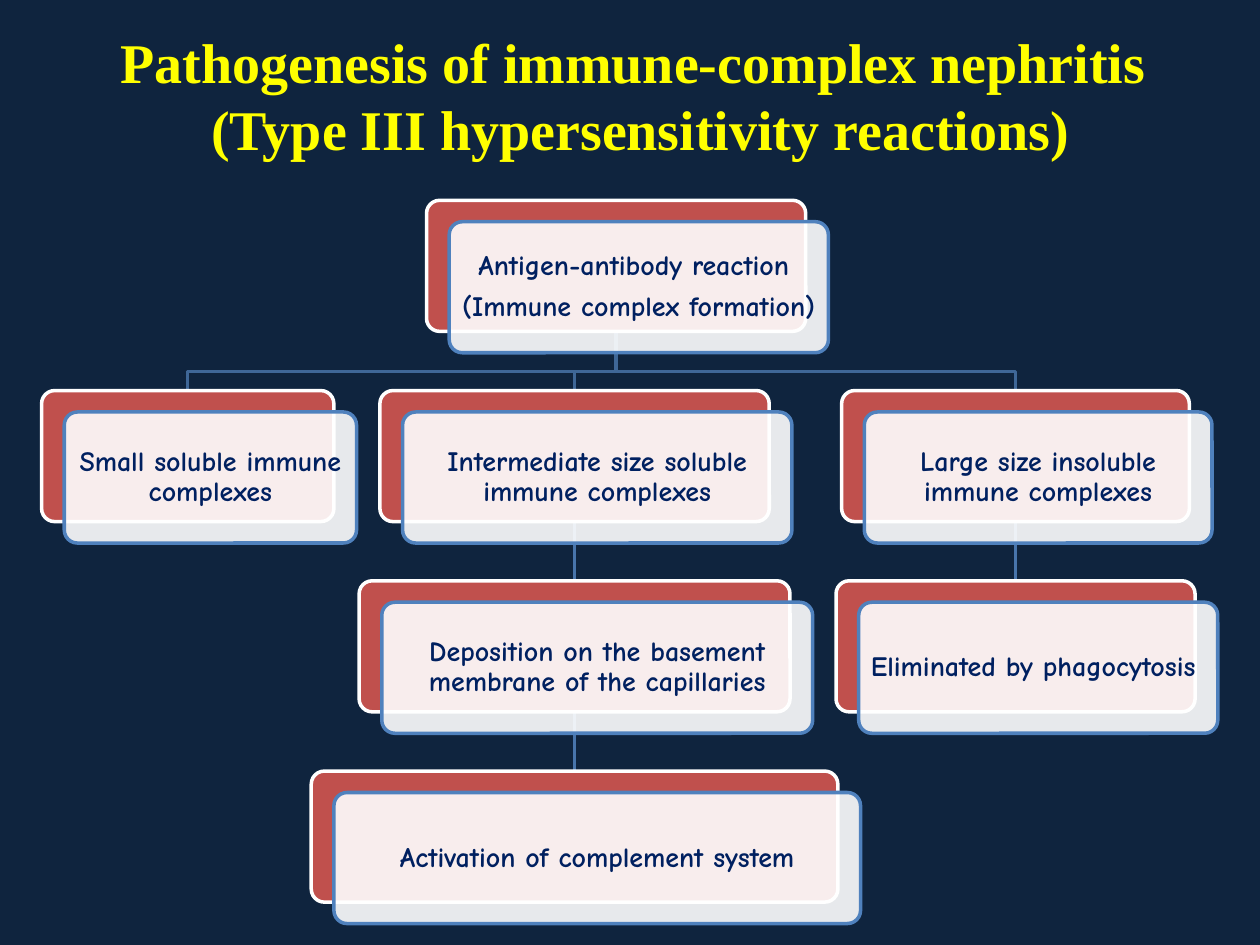
import pptx
import pptx.util
import pptx.dml.color
import pptx.enum.shapes
import pptx.enum.text
import pptx.oxml
import pptx.oxml.ns
from pptx.util import Inches

RGBColor = pptx.dml.color.RGBColor
NAVY = RGBColor(0x0F, 0x24, 0x3E)
RED = RGBColor(0xC0, 0x50, 0x4D)
WHITE = RGBColor(0xFF, 0xFF, 0xFF)
BLUE = RGBColor(0x4F, 0x81, 0xBD)
INK = RGBColor(0x00, 0x20, 0x60)
YELLOW = RGBColor(0xFF, 0xFF, 0x00)
FORK = RGBColor(0x3F, 0x67, 0x97)
STEM = RGBColor(0x48, 0x75, 0xAC)

# Card grid
TOP, STEP, HIGH = 1.59, 1.51, 1.04
SHIFT_X, SHIFT_Y = 0.18, 0.17
FORK_Y = 2.95


class Chart:
    """Holds the style and the current slide."""

    def __init__(self, slide):
        self.slide = slide
        self.shapes = slide.shapes
        slide.background.fill.solid()
        slide.background.fill.fore_color.rgb = NAVY

    def edge(self, line, color):
        line.color.rgb = color
        line.width = pptx.util.Pt(2)

    def label(self, frame, lines, font, size, color):
        frame.text = "\n".join(lines)
        frame.word_wrap = True
        for para in frame.paragraphs:
            para.alignment = pptx.enum.text.PP_ALIGN.CENTER
            for run in para.runs:
                run.font.name = font
                run.font.size = pptx.util.Pt(size)
                run.font.bold = True
                run.font.color.rgb = color

    def title(self, lines):
        box = self.shapes.add_textbox(Inches(0.42), Inches(0.17), Inches(9.33), Inches(1.18))
        self.label(box.text_frame, lines, "Times New Roman", 32, YELLOW)

    def plate(self, left, top, width, fill, line):
        kind = pptx.enum.shapes.MSO_SHAPE.ROUNDED_RECTANGLE
        shape = self.shapes.add_shape(kind, Inches(left), Inches(top), Inches(width), Inches(HIGH))
        shape.adjustments[0] = 0.1
        shape.shadow.inherit = False
        shape.fill.solid()
        shape.fill.fore_color.rgb = fill
        self.edge(shape.line, line)
        return shape

    def card(self, mid, row, width, lines):
        left, top = mid - width / 2, TOP + row * STEP
        self.plate(left, top, width, RED, WHITE)
        front = self.plate(left + SHIFT_X, top + SHIFT_Y, width, WHITE, BLUE)
        # Let the red plate show faintly through the front one
        tint = front._element.spPr.find(".//" + pptx.oxml.ns.qn("a:srgbClr"))
        tint.append(pptx.oxml.parse_xml(
            "<a:alpha %s val='90000'/>" % pptx.oxml.ns.nsdecls("a")))
        frame = front.text_frame
        frame.margin_left = frame.margin_right = Inches(0.04)
        frame.margin_top = frame.margin_bottom = Inches(0.04)
        frame.vertical_anchor = pptx.enum.text.MSO_ANCHOR.MIDDLE
        self.label(frame, lines, "Comic Neue", 16, INK)
        for para in frame.paragraphs:
            para.line_spacing = 0.9
            para.space_after = pptx.util.Pt(6)

    def stem(self, mid, row):
        """Straight line from a card down to the next row."""
        start = TOP + row * STEP + HIGH
        line = self.shapes.add_connector(
            pptx.enum.shapes.MSO_CONNECTOR.STRAIGHT,
            Inches(mid), Inches(start), Inches(mid), Inches(TOP + (row + 1) * STEP))
        self.edge(line.line, STEM)
        line._element.spPr.append(pptx.oxml.parse_xml(
            "<a:effectLst %s/>" % pptx.oxml.ns.nsdecls("a")))

    def fork(self, start, end):
        """Bent line from the first card to one in the second row."""
        spots = [(start, TOP + HIGH), (start, FORK_Y), (end, FORK_Y), (end, TOP + STEP)]
        spots = [(Inches(x), Inches(y)) for x, y in spots]
        bend = self.shapes.build_freeform(*spots[0])
        bend.add_line_segments(spots[1:], close=False)
        shape = bend.convert_to_shape()
        shape.shadow.inherit = False
        shape.fill.background()
        self.edge(shape.line, FORK)


def main():
    deck = pptx.Presentation()
    deck.slide_width, deck.slide_height = Inches(10), Inches(7.5)
    chart = Chart(deck.slides.add_slide(deck.slide_layouts[6]))

    # Column centres
    root, small, medium, large = 4.89, 1.49, 4.56, 8.06

    # Lines
    for mid, row in [(large, 1), (medium, 2), (medium, 1)]:
        chart.stem(mid, row)
    for mid in (large, medium, small):
        chart.fork(root, mid)

    # Cards: centre, row, width, text
    cards = [
        (root, 0, 3.01, ["Antigen-antibody reaction ", "(Immune complex formation)"]),
        (small, 1, 2.32, ["Small soluble immune complexes"]),
        (medium, 1, 3.09, ["Intermediate size soluble immune complexes"]),
        (medium, 2, 3.42, ["Deposition on the basement membrane of the capillaries"]),
        (medium, 3, 4.18, ["Activation of complement system"]),
        (large, 1, 2.76, ["Large size insoluble immune complexes"]),
        (large, 2, 2.85, ["Eliminated by phagocytosis "]),
    ]
    for card in cards:
        chart.card(*card)

    # Title
    chart.title(["Pathogenesis of immune-complex nephritis ",
                 "(Type III hypersensitivity reactions)"])
    deck.save("out.pptx")


if __name__ == "__main__":
    main()
